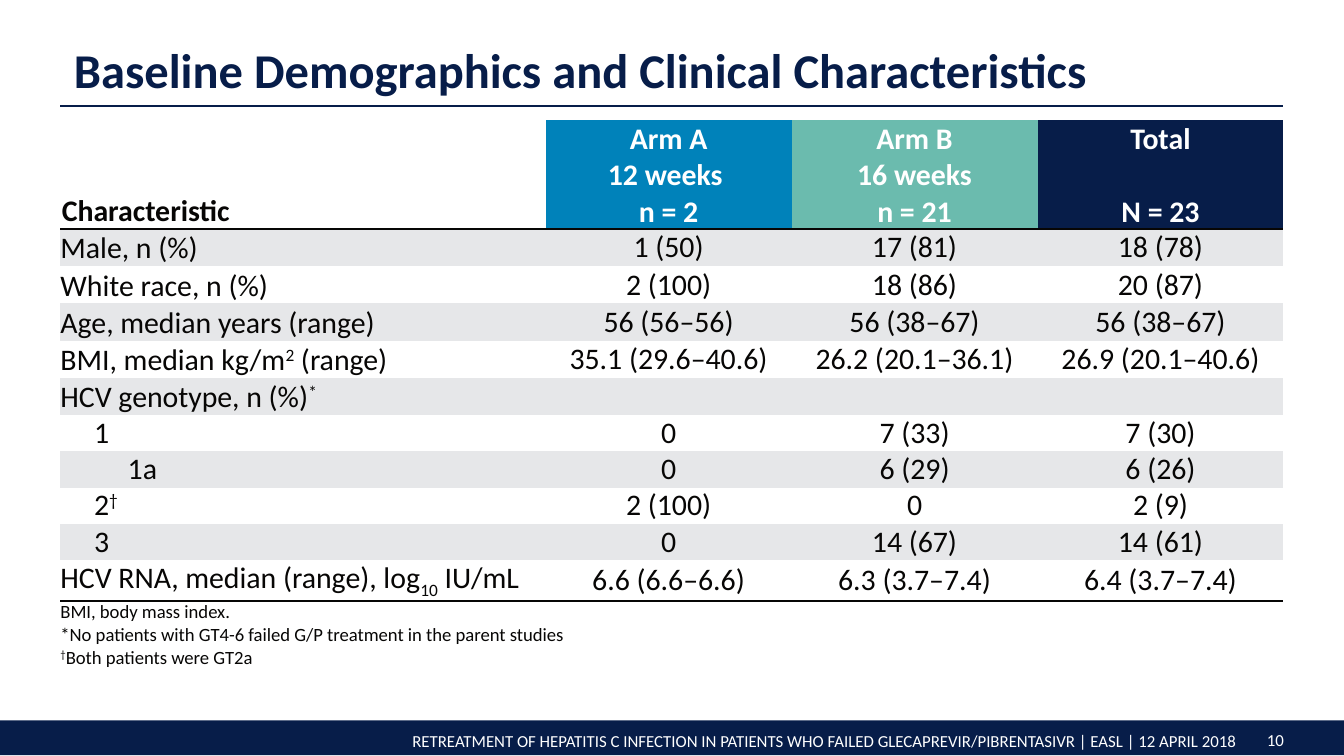
from dataclasses import dataclass

from lxml.etree import SubElement
from pptx import Presentation
from pptx.dml.color import RGBColor as RGB
from pptx.enum.shapes import MSO_CONNECTOR as Connector, MSO_SHAPE as Shape
from pptx.enum.text import MSO_ANCHOR as Anchor, MSO_AUTO_SIZE as AutoSize, PP_ALIGN as Align
from pptx.oxml import parse_xml
from pptx.oxml.ns import nsdecls, qn
from pptx.util import Inches, Pt


@dataclass(frozen=True)
class Theme:
    font: str = "Calibri"
    navy: str = "071D49"
    blue: str = "0082BA"
    teal: str = "6BBBAE"
    band: str = "E6E7E9"
    white: str = "FFFFFF"
    ink: str = "070605"
    title: int = 26
    body: int = 16
    note: int = 10
    footer: int = 9


@dataclass(frozen=True)
class Part:
    text: str
    baseline: int = 0


@dataclass(frozen=True)
class Arm:
    lines: tuple[str, ...]
    fill: str
    last_line_gap: float = 0


@dataclass(frozen=True)
class Characteristic:
    label: tuple[Part, ...]
    values: tuple[str, str, str]
    indent: float = 0
    top_inset: float = 0
    height: float = 0.27


THEME = Theme()
SUPER, SUB = 30000, -25000
LINE_BREAK = Part("\n")
LEFT, WIDTH = 0.45, 9.1
COLUMN_WIDTHS = (3.61, 1.83, 1.83, 1.83)
HEADER_HEIGHT, NOTE_HEIGHT = 0.81, 0.51
NO_STYLE_NO_GRID = "{2D5ABB26-0587-4C30-8999-92F81FD0307C}"

ARMS = (
    Arm(("Arm A", "12 weeks ", "n = 2"), THEME.blue),
    Arm(("Arm B", "16 weeks", "n = 21"), THEME.teal),
    Arm(("Total", "N = 23"), THEME.navy, 19.5),
)
CHARACTERISTICS = (
    Characteristic((Part("Male, n (%)"),), ("1 (50)", "17 (81)", "18 (78)"), top_inset=0.01),
    Characteristic((Part("White race, n (%)"),), ("2 (100)", "18 (86)", "20 (87)"), top_inset=0.01),
    Characteristic((Part("Age, median years (range)"),), ("56 (56–56)", "56 (38–67)", "56 (38–67)"),
                   top_inset=0.01),
    Characteristic((Part("BMI, median kg/m"), Part("2", SUPER), Part(" (range)")),
                   ("35.1 (29.6–40.6)", "26.2 (20.1–36.1)", "26.9 (20.1–40.6)"), top_inset=0.01),
    Characteristic((Part("HCV genotype, n (%)"), Part("*", SUPER)), ("", "", ""), top_inset=0.01),
    Characteristic((Part("1"),), ("0", "7 (33)", "7 (30)"), 0.25),
    Characteristic((Part("1a"),), ("0", "6 (29)", "6 (26)"), 0.5),
    Characteristic((Part("2"), Part("†", SUPER)), ("2 (100)", "0", "2 (9)"), 0.25),
    Characteristic((Part("3"),), ("0", "14 (67)", "14 (61)"), 0.25),
    Characteristic((Part("HCV RNA, median (range), log"), Part("10", SUB), Part(" IU/mL")),
                   ("6.6 (6.6–6.6)", "6.3 (3.7–7.4)", "6.4 (3.7–7.4)"), height=0.3),
)
FOOTNOTES = (
    (Part("BMI, body mass index."), LINE_BREAK,
     Part("*No patients with GT4-6 failed G/P treatment in the parent studies")),
    (Part("†", SUPER), Part("Both patients were GT2a")),
)
FOOTER = "RETREATMENT OF HEPATITIS C INFECTION IN PATIENTS WHO FAILED GLECAPREVIR/PIBRENTASIVR | EASL | 12 APRIL 2018"


def write(paragraph, parts: tuple[Part, ...], size: int, color: str,
          bold: bool = False, align: Align = Align.LEFT, indent: float = 0) -> None:
    for part in parts:
        if part == LINE_BREAK:
            paragraph.add_line_break()
        elif part.text:
            run = paragraph.add_run()
            run.text = part.text
            if part.baseline:
                run._r.get_or_add_rPr().set("baseline", str(part.baseline))
    font = paragraph.font
    font.name, font.size, font.bold = THEME.font, Pt(size), bold
    font.color.rgb = RGB.from_string(color)
    paragraph.alignment = align
    if indent:
        paragraph._p.get_or_add_pPr().set("marL", str(Inches(indent)))
    if not paragraph.runs:
        paragraph._p.get_or_add_endParaRPr().set("sz", str(size * 100))


def write_lines(frame, lines: tuple[tuple[Part, ...], ...], size: int, color: str,
                bold: bool = False, align: Align = Align.LEFT, indent: float = 0) -> None:
    for index, parts in enumerate(lines):
        paragraph = frame.add_paragraph() if index else frame.paragraphs[0]
        write(paragraph, parts, size, color, bold, align, indent)


def format_cell(cell, fill: str, side_inset: float, top_inset: float, anchor: Anchor = Anchor.MIDDLE) -> None:
    cell.fill.solid()
    cell.fill.fore_color.rgb = RGB.from_string(fill)
    cell.margin_left = cell.margin_right = Inches(side_inset)
    cell.margin_top, cell.margin_bottom = Inches(top_inset), 0
    cell.vertical_anchor = anchor


def rule_between(table, upper_row: int) -> None:
    ink = f'<a:solidFill><a:srgbClr val="{THEME.ink}"/></a:solidFill>'
    for row, edge, stroke in ((upper_row, "lnB", ink), (upper_row + 1, "lnB", "<a:noFill/>"),
                              (upper_row + 1, "lnT", ink)):
        for cell in table.rows[row].cells:
            border = parse_xml(f'<a:{edge} {nsdecls("a")} w="12700">{stroke}</a:{edge}>')
            cell._tc.get_or_add_tcPr().insert(0, border)


def add_title(slide, text: str) -> None:
    title = slide.shapes.title
    title.left, title.top, title.width, title.height = map(Inches, (LEFT, 0.21, WIDTH, 0.58))
    frame = title.text_frame
    frame.auto_size = AutoSize.NONE
    frame.vertical_anchor = Anchor.BOTTOM
    write(frame.paragraphs[0], (Part(text),), THEME.title, THEME.navy, True)
    frame.paragraphs[0].line_spacing = 0.9

    rule = slide.shapes.add_connector(
        Connector.STRAIGHT, Inches(LEFT), Inches(0.79), Inches(LEFT + WIDTH), Inches(0.79))
    rule.line.color.rgb = RGB.from_string(THEME.navy)
    rule.line.width = Pt(0.75)
    SubElement(rule._element.spPr, qn("a:effectLst"))


def add_footer_text(slide, text: str, box: tuple[float, ...], align: Align, spacing: float) -> None:
    frame = slide.shapes.add_textbox(*map(Inches, box)).text_frame
    frame.word_wrap = True
    write(frame.paragraphs[0], (Part(text),), THEME.footer, THEME.white, align=align)
    frame.paragraphs[0].line_spacing = spacing


def add_footer(slide) -> None:
    bar = slide.shapes.add_shape(Shape.RECTANGLE, 0, Inches(5.36), Inches(10), Inches(0.26))
    bar.fill.solid()
    bar.fill.fore_color.rgb = RGB.from_string(THEME.navy)
    bar.line.fill.background()
    bar.shadow.inherit = False
    add_footer_text(slide, FOOTER, (-0.35, 5.39, 9.64, 0.25), Align.RIGHT, 1.0)
    add_footer_text(slide, "10", (9.3, 5.4, 0.38, 0.24), Align.CENTER, 0.9)


def add_demographics(slide) -> None:
    heights = (HEADER_HEIGHT, *(item.height for item in CHARACTERISTICS), NOTE_HEIGHT)
    table = slide.shapes.add_table(
        len(heights), len(COLUMN_WIDTHS), Inches(LEFT), Inches(0.89), Inches(WIDTH), Inches(sum(heights))).table
    table.first_row = table.horz_banding = False
    table._tbl.tblPr.find(qn("a:tableStyleId")).text = NO_STYLE_NO_GRID
    for column, width in zip(table.columns, COLUMN_WIDTHS):
        column.width = Inches(width)
    for row, height in zip(table.rows, heights):
        row.height = Inches(height)

    corner = table.cell(0, 0)
    format_cell(corner, THEME.white, 0.01, 0.01, Anchor.BOTTOM)
    write_lines(corner.text_frame, ((Part("Characteristic"),),), THEME.body, THEME.ink, True)
    for column, arm in enumerate(ARMS, 1):
        cell = table.cell(0, column)
        format_cell(cell, arm.fill, 0.01, 0.01)
        lines = tuple((Part(line),) for line in arm.lines)
        write_lines(cell.text_frame, lines, THEME.body, THEME.white, True, Align.CENTER)
        if arm.last_line_gap:
            cell.text_frame.paragraphs[-1].space_before = Pt(arm.last_line_gap)

    for row, item in enumerate(CHARACTERISTICS, 1):
        fill = THEME.band if row % 2 else THEME.white
        label = table.cell(row, 0)
        format_cell(label, fill, 0, item.top_inset)
        write_lines(label.text_frame, (item.label,), THEME.body, THEME.ink, indent=item.indent)
        for column, value in enumerate(item.values, 1):
            cell = table.cell(row, column)
            format_cell(cell, fill, 0.07, 0)
            write(cell.text_frame.paragraphs[0], (Part(value),), THEME.body, THEME.ink, align=Align.CENTER)

    last = len(heights) - 1
    notes = table.cell(last, 0)
    notes.merge(table.cell(last, len(COLUMN_WIDTHS) - 1))
    format_cell(notes, THEME.white, 0, 0)
    write_lines(notes.text_frame, FOOTNOTES, THEME.note, THEME.ink)
    rule_between(table, 0)
    rule_between(table, last - 1)


def main() -> None:
    deck = Presentation()
    deck.slide_width, deck.slide_height = Inches(10), Inches(10) * 9 // 16
    slide = deck.slides.add_slide(deck.slide_layouts[5])
    add_footer(slide)
    add_title(slide, "Baseline Demographics and Clinical Characteristics")
    add_demographics(slide)
    deck.save("out.pptx")


if __name__ == "__main__":
    main()
